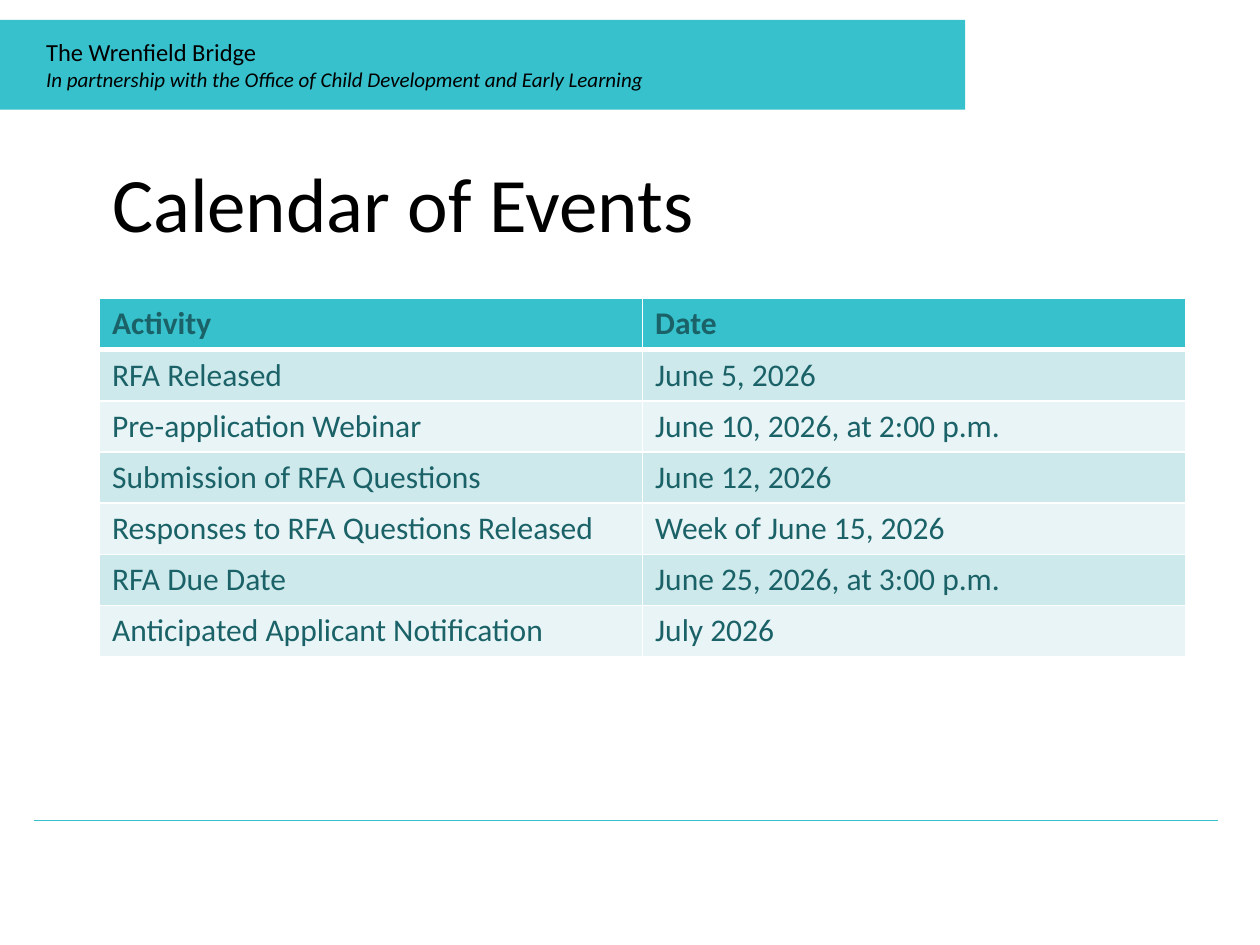
from lxml.etree import SubElement
from pptx import Presentation
from pptx.dml.color import RGBColor
from pptx.enum.shapes import MSO_CONNECTOR as CONN, MSO_SHAPE as SHAPE
from pptx.enum.text import MSO_ANCHOR as ANCHOR, MSO_AUTO_SIZE as AUTO, PP_ALIGN as ALIGN
from pptx.oxml.ns import qn
from pptx.util import Inches, Pt

WIDTH, HEIGHT = Inches(10), Inches(7.5)
COLORS = {
    "accent": "37C1CC", "text": "000000", "cell": "1A6267",
    "odd": "CEE9EC", "even": "E8F4F6", "border": "FFFFFF",
}
FORMATS = {
    "name": {"size": Pt(14)},
    "partner": {"size": Pt(12), "italic": True},
    "title": {"size": Pt(44)},
    "head": {"size": Pt(18), "bold": True},
    "body": {"size": Pt(18), "bold": False},
}
EVENTS = [
    ("Activity", "Date"),
    ("RFA Released", "June 5, 2026"),
    ("Pre-application Webinar", "June 10, 2026, at 2:00 p.m."),
    ("Submission of RFA Questions", "June 12, 2026"),
    ("Responses to RFA Questions Released", "Week of June 15, 2026"),
    ("RFA Due Date", "June 25, 2026, at 3:00 p.m."),
    ("Anticipated Applicant Notification", "July 2026"),
]


def rgb(name):
    return RGBColor.from_string(COLORS[name])


def share(box, x, y, w, h):
    left, top, width, height = box
    return (int(left + x * width), int(top + y * height),
            int(w * width), int(h * height))


def write(p, text, style, color="text"):
    r = p.add_run()
    r.text = text
    r.font.name = "Calibri"
    r.font.color.rgb = rgb(color)
    for key, value in FORMATS[style].items():
        setattr(r.font, key, value)


def add_banner(s, box):
    bar = s.shapes.add_shape(SHAPE.RECTANGLE, *box)
    bar.shadow.inherit = False
    bar.fill.solid()
    bar.fill.fore_color.rgb = rgb("accent")
    bar.line.fill.background()
    tf = s.shapes.add_textbox(*share(box, 0.035, 0.125, 0.883, 0.76)).text_frame
    tf.word_wrap = True
    tf.auto_size = AUTO.SHAPE_TO_FIT_TEXT
    write(tf.paragraphs[0], "The Wrenfield Bridge", "name")
    write(tf.add_paragraph(),
          "In partnership with the Office of Child Development and Early Learning",
          "partner")


def add_rule(s, box):
    left, top, width, _ = box
    line = s.shapes.add_connector(CONN.STRAIGHT, left, top, left + width, top)
    line.line.color.rgb = rgb("accent")
    line.line.width = Pt(0.5)
    SubElement(line._element.spPr, qn("a:effectLst"))


def add_title(s, box):
    title = s.shapes.title
    title.left, title.top, title.width, title.height = box
    tf = title.text_frame
    tf.vertical_anchor = ANCHOR.MIDDLE
    p = tf.paragraphs[0]
    p.alignment = ALIGN.LEFT
    p.line_spacing = 0.9
    write(p, "Calendar of Events", "title")


def set_border(cell, side, width):
    ln = SubElement(cell._tc.get_or_add_tcPr(), qn(f"a:ln{side}"), w=str(Pt(width)))
    fill = SubElement(ln, qn("a:solidFill"))
    SubElement(fill, qn("a:srgbClr"), val=COLORS["border"])


def add_calendar(s, box):
    table = s.shapes.add_table(len(EVENTS), len(EVENTS[0]), *box).table
    for i, event in enumerate(EVENTS):
        fill = "accent" if i == 0 else "odd" if i % 2 else "even"
        for j, text in enumerate(event):
            cell = table.cell(i, j)
            for side in "LRTB":
                heavy = (side, i) in (("B", 0), ("T", 1))
                set_border(cell, side, 3 if heavy else 1)
            cell.fill.solid()
            cell.fill.fore_color.rgb = rgb(fill)
            write(cell.text_frame.paragraphs[0], text,
                  "body" if i else "head", "cell")


def main():
    prs = Presentation()
    prs.slide_width, prs.slide_height = WIDTH, HEIGHT
    s = prs.slides.add_slide(prs.slide_layouts[5])
    page = (0, 0, WIDTH, HEIGHT)
    add_banner(s, share(page, 0, 0.021, 0.766, 0.095))
    add_rule(s, share(page, 0.027, 0.868, 0.94, 0))
    add_title(s, share(page, 0.079, 0.123, 0.862, 0.193))
    add_calendar(s, share(page, 0.079, 0.316, 0.862, 0.379))
    prs.save("out.pptx")


if __name__ == "__main__":
    main()
